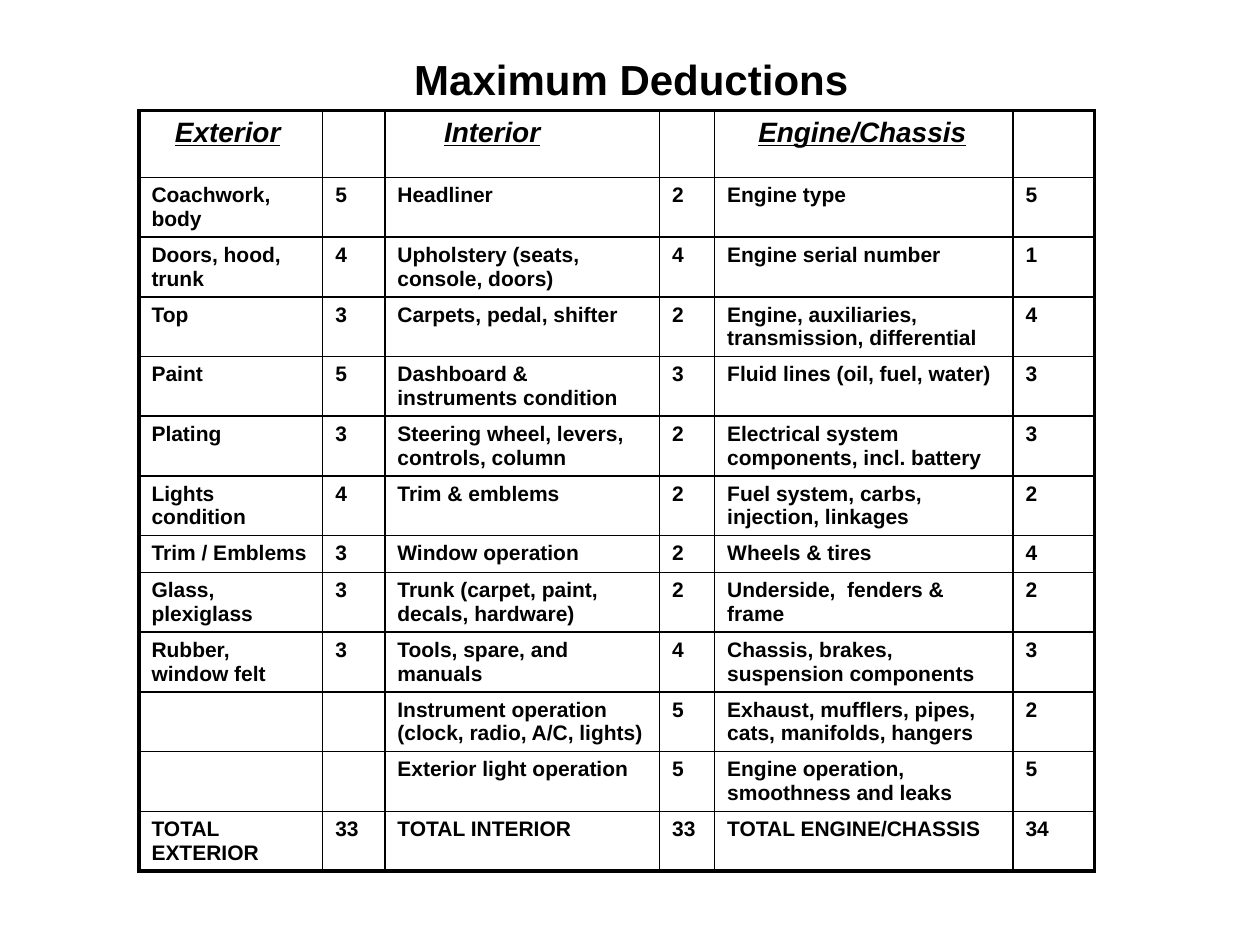
import pptx
import pptx.util
import pptx.dml.color
import pptx.enum.text
import pptx.oxml.ns
import lxml.etree

Pt = pptx.util.Pt
BLACK = pptx.dml.color.RGBColor(0, 0, 0)
FONT = "Arial"
THIN, THICK = 1, 2.25
INSET = 7.2
WIDTHS = [105, 35.5, 157, 31.5, 170.5, 46.5]
HEAD, TALL, SHORT = 38.2, 34.1, 21.2
HEADS = [("Exterior", 13.4), ("Interior", 26.7), ("Engine/Chassis", 17.8)]
ROWS = [
    ("Coachwork, body", "5", "Headliner", "2", "Engine type", "5"),
    ("Doors, hood, trunk", "4", "Upholstery (seats, console, doors)", "4",
     "Engine serial number", "1"),
    ("Top", "3", "Carpets, pedal, shifter", "2",
     "Engine, auxiliaries, transmission, differential", "4"),
    ("Paint", "5", "Dashboard & instruments condition", "3",
     "Fluid lines (oil, fuel, water)", "3"),
    ("Plating", "3", "Steering wheel, levers, controls, column", "2",
     "Electrical system components, incl. battery", "3"),
    ("Lights condition", "4", "Trim & emblems", "2",
     "Fuel system, carbs, injection, linkages", "2"),
    ("Trim / Emblems", "3", "Window operation", "2", "Wheels & tires", "4"),
    ("Glass, plexiglass", "3", "Trunk (carpet, paint, decals, hardware)", "2",
     "Underside,  fenders & frame", "2"),
    ("Rubber, window felt", "3", "Tools, spare, and manuals", "4",
     "Chassis, brakes, suspension components", "3"),
    ("", "", "Instrument operation (clock, radio, A/C, lights)", "5",
     "Exhaust, mufflers, pipes, cats, manifolds, hangers", "2"),
    ("", "", "Exterior light operation", "5",
     "Engine operation, smoothness and leaks", "5"),
    ("TOTAL EXTERIOR", "33", "TOTAL INTERIOR", "33",
     "TOTAL ENGINE/CHASSIS", "34"),
]
SHORT_ROW = 7


def write(frame, text, size=12, italic=False, under=False, align=None):
    para = frame.paragraphs[0]
    para.alignment = align
    run = para.add_run()
    run.text = text
    font = run.font
    font.name, font.size, font.bold = FONT, Pt(size), True
    font.italic, font.underline = italic, under
    font.color.rgb = BLACK


def rule(cell, sides):
    props = cell._tc.get_or_add_tcPr()
    for spot, (side, width) in enumerate(sides.items()):
        line = lxml.etree.Element(pptx.oxml.ns.qn("a:ln" + side), w=str(Pt(width)))
        fill = lxml.etree.SubElement(line, pptx.oxml.ns.qn("a:solidFill"))
        lxml.etree.SubElement(fill, pptx.oxml.ns.qn("a:srgbClr"), val=str(BLACK))
        props.insert(spot, line)


def add_title(slide, left, top, width, height):
    title = slide.shapes.title
    title.left, title.top = Pt(left), Pt(top)
    title.width, title.height = Pt(width), Pt(height)
    title.text_frame.vertical_anchor = pptx.enum.text.MSO_ANCHOR.MIDDLE
    write(title.text_frame, "Maximum Deductions", size=24,
          align=pptx.enum.text.PP_ALIGN.CENTER)


def add_grid(slide, left, top, width, height):
    count, wide = len(ROWS) + 1, len(WIDTHS)
    grid = slide.shapes.add_table(
        count, wide, Pt(left), Pt(top), Pt(width), Pt(height)).table
    grid.first_row = grid.horz_banding = False
    for col, size in zip(grid.columns, WIDTHS):
        col.width = Pt(size)
    for row in grid.rows:
        row.height = Pt(TALL)
    grid.rows[0].height = Pt(HEAD)
    grid.rows[SHORT_ROW].height = Pt(SHORT)

    for r in range(count):
        for c in range(wide):
            cell = grid.cell(r, c)
            cell.fill.background()
            cell.margin_left = cell.margin_right = Pt(INSET)
            cell.margin_top = cell.margin_bottom = Pt(INSET / 2)
            rule(cell, {
                "L": THICK if c == 0 else THIN,
                "R": THICK if c == wide - 1 else THIN,
                "T": THICK if r == 0 else THIN,
                "B": THICK if r == count - 1 else THIN,
            })
            if r and ROWS[r - 1][c]:
                write(cell.text_frame, ROWS[r - 1][c])

    for i, (text, indent) in enumerate(HEADS):
        cell = grid.cell(0, 2 * i)
        cell.margin_left = Pt(INSET + indent)
        write(cell.text_frame, text, size=16, italic=True, under=True)


def main():
    deck = pptx.Presentation()
    deck.slide_width, deck.slide_height = Pt(720), Pt(540)
    slide = deck.slides.add_slide(deck.slide_layouts[5])
    add_title(slide, 36.7, 0, 648, 90)
    add_grid(slide, 79.4, 63.2, sum(WIDTHS), HEAD + 11 * TALL + SHORT)
    deck.save("out.pptx")


if __name__ == "__main__":
    main()
